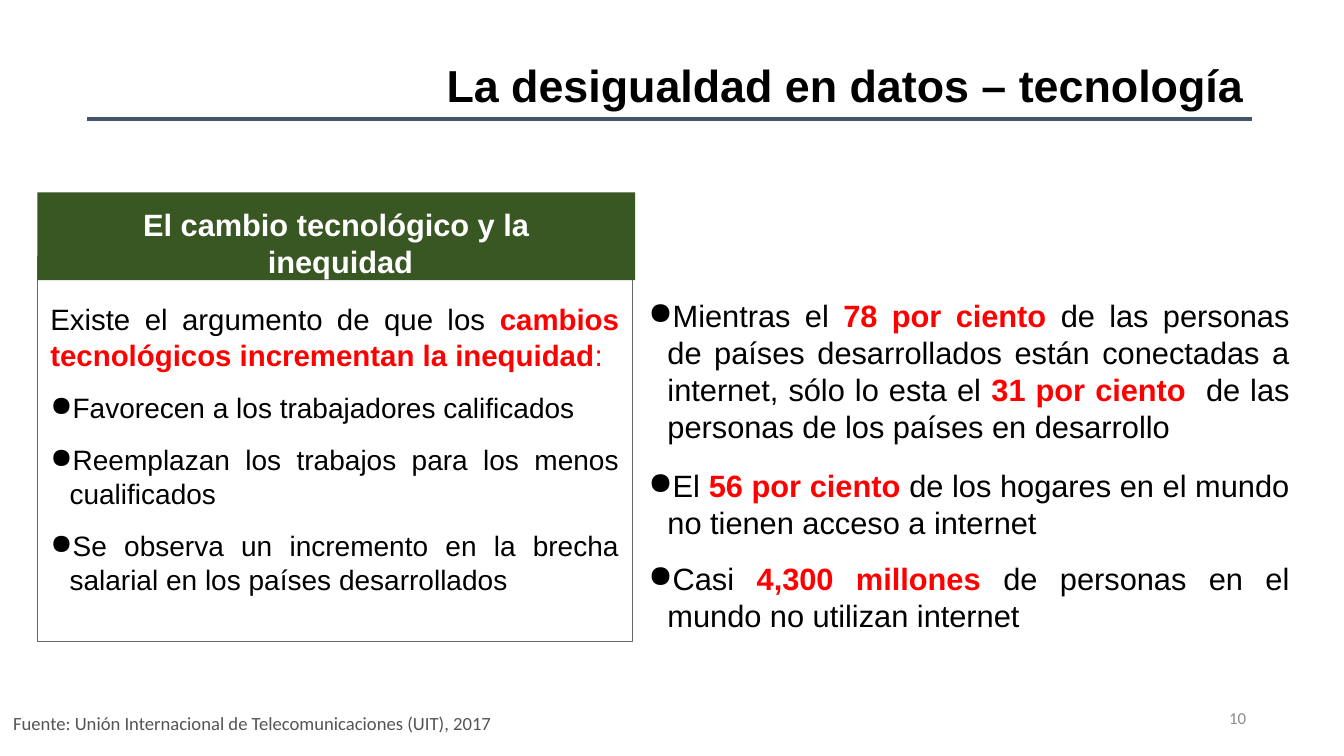
from lxml import etree
from pptx import Presentation
from pptx.dml.color import RGBColor
from pptx.enum.shapes import MSO_CONNECTOR, MSO_SHAPE
from pptx.enum.text import MSO_ANCHOR, PP_ALIGN
from pptx.oxml.ns import qn
from pptx.util import Inches, Pt

RECTANGLE = MSO_SHAPE.RECTANGLE
STRAIGHT = MSO_CONNECTOR.STRAIGHT
MIDDLE, TOP = MSO_ANCHOR.MIDDLE, MSO_ANCHOR.TOP
LEFT, CENTER = PP_ALIGN.LEFT, PP_ALIGN.CENTER
RIGHT, JUSTIFY = PP_ALIGN.RIGHT, PP_ALIGN.JUSTIFY

COLORS = {
    "black": "000000",
    "white": "FFFFFF",
    "red": "FF0000",
    "green": "385723",
    "slate": "44546A",
    "border": "666666",
    "source": "545454",
    "number": "8C8C8C",
}


def color(name):
    return RGBColor.from_string(COLORS[name])


def write(shape, paragraphs, align, anchor=MIDDLE, inset=0.13, font="Arial"):
    frame = shape.text_frame
    frame.word_wrap = True
    frame.vertical_anchor = anchor
    for side in ("left", "right", "top", "bottom"):
        setattr(frame, f"margin_{side}", Inches(inset))
    for index, (size, before, bullet, runs) in enumerate(paragraphs):
        paragraph = frame.paragraphs[0] if index == 0 else frame.add_paragraph()
        paragraph.alignment = align
        paragraph.space_before = Pt(before)
        if bullet:
            properties = paragraph._p.get_or_add_pPr()
            properties.set("marL", str(Inches(0.19)))
            properties.set("indent", str(-Inches(0.19)))
            etree.SubElement(properties, qn("a:buChar")).set("char", "●")
        for text, color_name, bold in runs:
            run = paragraph.add_run()
            run.text = text
            run.font.color.rgb = color(color_name)
            formats = {"name": font, "size": Pt(size), "bold": bold}
            for attribute, value in formats.items():
                setattr(run.font, attribute, value)


presentation = Presentation()
presentation.slide_width = Inches(13.33)
presentation.slide_height = Inches(7.5)
slide = presentation.slides.add_slide(presentation.slide_layouts[6])
shapes = slide.shapes

page_number = shapes.add_textbox(Inches(11.69), Inches(6.84), Inches(0.8), Inches(0.57))
write(page_number, [(12, 0, False, [("10", "number", False)])], RIGHT, font="Calibri")

source = shapes.add_textbox(Inches(0), Inches(6.8), Inches(10.55), Inches(0.74))
source_text = "Fuente: Unión Internacional de Telecomunicaciones (UIT), 2017"
write(source, [(13.3, 0, False, [(source_text, "source", False)])], LEFT, font="Calibri")

argument_box = shapes.add_shape(RECTANGLE, Inches(0.37), Inches(2.54), Inches(5.9), Inches(3.82))
argument_box.shadow.inherit = False
argument_box.fill.background()
argument_box.line.color.rgb = color("border")
argument_box.line.width = Pt(0.75)
effects = [
    "Favorecen a los trabajadores calificados",
    "Reemplazan los trabajos para los menos cualificados",
    "Se observa un incremento en la brecha salarial en los países desarrollados",
]
argument = [(21, 0, False, [
    ("Existe el argumento de que los ", "black", False),
    ("cambios tecnológicos incrementan la inequidad", "red", True),
    (":", "red", False),
])]
argument += [(20, 13.3, True, [(effect, "black", False)]) for effect in effects]
write(argument_box, argument, JUSTIFY)

figures = [
    (0, [
        ("Mientras el ", "black", False),
        ("78 por ciento ", "red", True),
        ("de las personas de países desarrollados están conectadas a internet, "
         "sólo lo esta el ", "black", False),
        ("31 por ciento  ", "red", True),
        ("de las personas de los países en desarrollo", "black", False),
    ]),
    (16, [
        ("El", "black", False),
        (" 56 por ciento ", "red", True),
        ("de los hogares en el mundo no tienen acceso a internet", "black", False),
    ]),
    (13.3, [
        ("Casi ", "black", False),
        ("4,300 millones ", "red", True),
        ("de personas en el mundo no utilizan internet", "black", False),
    ]),
]
figures_box = shapes.add_textbox(Inches(6.3), Inches(2.71), Inches(6.62), Inches(3.81))
write(figures_box, [(22, before, True, runs) for before, runs in figures], JUSTIFY)

header = shapes.add_shape(RECTANGLE, Inches(0.37), Inches(1.91), Inches(5.93), Inches(0.87))
header.shadow.inherit = False
header.fill.solid()
header.fill.fore_color.rgb = color("green")
header.line.fill.background()
header_lines = ["El cambio tecnológico y la", " inequidad"]
write(header, [(22, 0, False, [(line, "white", True)]) for line in header_lines], CENTER, TOP)

title_rule = shapes.add_connector(STRAIGHT, Inches(0.86), Inches(1.18), Inches(12.42), Inches(1.18))
title_rule.line.color.rgb = color("slate")
title_rule.line.width = Pt(3)
etree.SubElement(title_rule._element.spPr, qn("a:effectLst"))

title = shapes.add_textbox(Inches(0.94), Inches(0.15), Inches(11.5), Inches(1.45))
title_text = "La desigualdad en datos – tecnología"
write(title, [(32, 0, False, [(title_text, "black", True)])], RIGHT, inset=0.1)
title.text_frame.paragraphs[0].line_spacing = 0.9

presentation.save("out.pptx")
